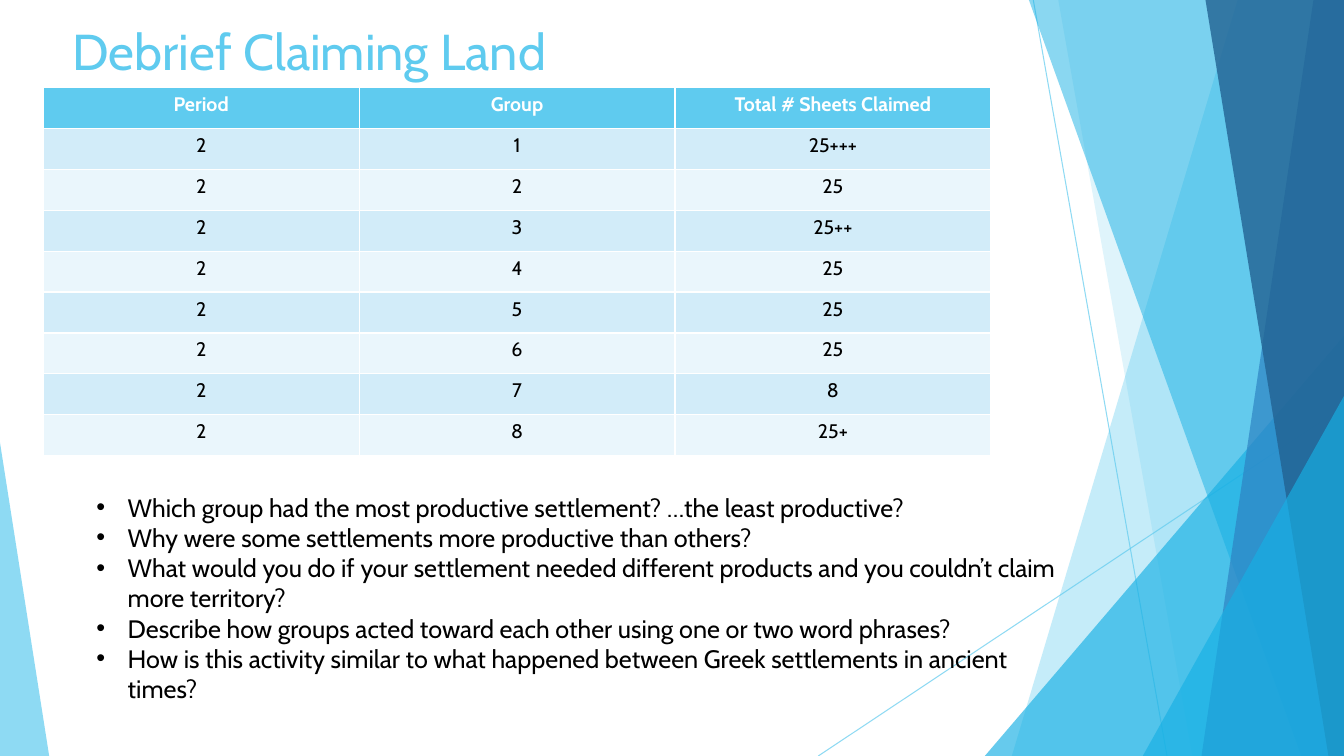
from lxml import etree
from pptx import Presentation
from pptx.dml.color import RGBColor
from pptx.enum.shapes import MSO_CONNECTOR, MSO_SHAPE
from pptx.enum.text import MSO_ANCHOR, PP_ALIGN
from pptx.oxml.ns import qn
from pptx.util import Cm, Pt

LINE = MSO_CONNECTOR.STRAIGHT
TRIANGLE = MSO_SHAPE.ISOSCELES_TRIANGLE
TOP = MSO_ANCHOR.TOP
LEFT, CENTER = PP_ALIGN.LEFT, PP_ALIGN.CENTER

WIDE, HIGH = 33.87, 19.05
COLORS = {
    "sky": "5FCBEF", "cyan": "17B0E4", "blue": "2E83C3", "navy": "226292",
    "dark": "D2ECF9", "light": "EAF6FC", "white": "FFFFFF", "black": "000000",
}


class Deck:
    """Holds the style and the current slide."""

    def __init__(self, font):
        self.font = font
        self.file = Presentation()
        self.file.slide_width, self.file.slide_height = Cm(WIDE), Cm(HIGH)
        self.slide = self.file.slides.add_slide(self.file.slide_layouts[5])
        self.shapes = self.slide.shapes

    def paint(self, fill, color, alpha=100):
        fill.solid()
        fill.fore_color.rgb = RGBColor.from_string(COLORS[color])
        if alpha < 100:
            tint = fill._xPr.find(".//" + qn("a:srgbClr"))
            etree.SubElement(tint, qn("a:alpha"), val=str(alpha * 1000))

    def finish(self, shape, color, alpha):
        shape.shadow.inherit = False
        shape.line.fill.background()
        self.paint(shape.fill, color, alpha)

    def line(self, x1, y1, x2, y2):
        line = self.shapes.add_connector(LINE, Cm(x1), Cm(y1), Cm(x2), Cm(y2))
        line.line.width = Pt(0.75)
        self.paint(line.line.fill, "sky", 70)
        etree.SubElement(line._element.spPr, qn("a:effectLst"))

    def band(self, top, base, color, alpha):
        """A band from a slanted left edge to the right edge of the slide."""
        outline = self.shapes.build_freeform(Cm(top), 0)
        corners = [(WIDE, 0), (WIDE, HIGH), (base, HIGH)]
        outline.add_line_segments([(Cm(x), Cm(y)) for x, y in corners])
        self.finish(outline.convert_to_shape(), color, alpha)

    def wedge(self, x, y, width, peak, color, alpha):
        """A triangle that stands on the bottom edge of the slide."""
        shape = self.shapes.add_shape(
            TRIANGLE, Cm(x), Cm(y), Cm(width), Cm(HIGH - y))
        shape.adjustments[0] = peak
        self.finish(shape, color, alpha)

    def text(self, para, words, size, color, align=LEFT, bold=False):
        para.alignment = align
        run = para.add_run()
        run.text = words
        run.font.name, run.font.size, run.font.bold = self.font, Pt(size), bold
        run.font.color.rgb = RGBColor.from_string(COLORS[color])

    def title(self, words, x, y, width, height):
        box = self.shapes.title
        box.left, box.top = Cm(x), Cm(y)
        box.width, box.height = Cm(width), Cm(height)
        box.text_frame.vertical_anchor = TOP
        self.text(box.text_frame.paragraphs[0], words, 36, "sky")

    def table(self, rows, x, y, width, height):
        grid = self.shapes.add_table(
            len(rows), len(rows[0]), Cm(x), Cm(y), Cm(width), Cm(height)).table
        for r, row in enumerate(rows):
            head = r == 0
            fill = "sky" if head else ("light", "dark")[r % 2]
            color = "white" if head else "black"
            for c, words in enumerate(row):
                cell = grid.cell(r, c)
                self.paint(cell.fill, fill)
                self.text(cell.text_frame.paragraphs[0], words, 14, color,
                          CENTER, head)

    def bullets(self, items, x, y, width, height):
        frame = self.shapes.add_textbox(
            Cm(x), Cm(y), Cm(width), Cm(height)).text_frame
        frame.word_wrap = True
        for i, words in enumerate(items):
            para = frame.add_paragraph() if i else frame.paragraphs[0]
            self.text(para, words, 18, "black")
            props = para._p.get_or_add_pPr()
            props.set("marL", str(Cm(0.79)))
            props.set("indent", str(-Cm(0.79)))
            etree.SubElement(props, qn("a:buFont"), typeface="Arial")
            etree.SubElement(props, qn("a:buChar"), char="•")


def main():
    deck = Deck("Cabin")

    # Slanted backdrop
    deck.line(26.04, 0, 29.41, HIGH)
    deck.line(WIDE, 10.24, 20.62, HIGH)
    deck.band(31.19, 25.5, "sky", 36)
    deck.band(26.67, 30.05, "sky", 20)
    deck.wedge(24.82, 8.46, 9.05, 1, "cyan", 66)
    deck.band(25.93, 32.79, "cyan", 50)
    deck.band(33.1, 30.28, "blue", 70)
    deck.band(30.38, 33.48, "navy", 80)
    deck.wedge(28.8, 9.98, 5.07, 1, "cyan", 66)
    deck.wedge(0, 11.15, 1.24, 0, "sky", 70)

    # Title
    deck.title("Debrief Claiming Land", 1.57, 0.38, 23.88, 3.66)

    # Sheets claimed by each group
    claims = ["25+++", "25", "25++", "25", "25", "25", "8", "25+"]
    rows = [("Period", "Group", "Total # Sheets Claimed")]
    rows += [("2", str(n), claim) for n, claim in enumerate(claims, 1)]
    deck.table(rows, 1.09, 2.21, 23.88, 9.27)

    # Questions
    deck.bullets([
        "Which group had the most productive settlement? …the least productive?",
        "Why were some settlements more productive than others?",
        "What would you do if your settlement needed different products "
        "and you couldn’t claim more territory?",
        "Describe how groups acted toward each other using one or two word phrases?",
        "How is this activity similar to what happened between Greek "
        "settlements in ancient times?",
    ], 2.18, 12.27, 24.79, 5.64)

    deck.file.save("out.pptx")


if __name__ == "__main__":
    main()
